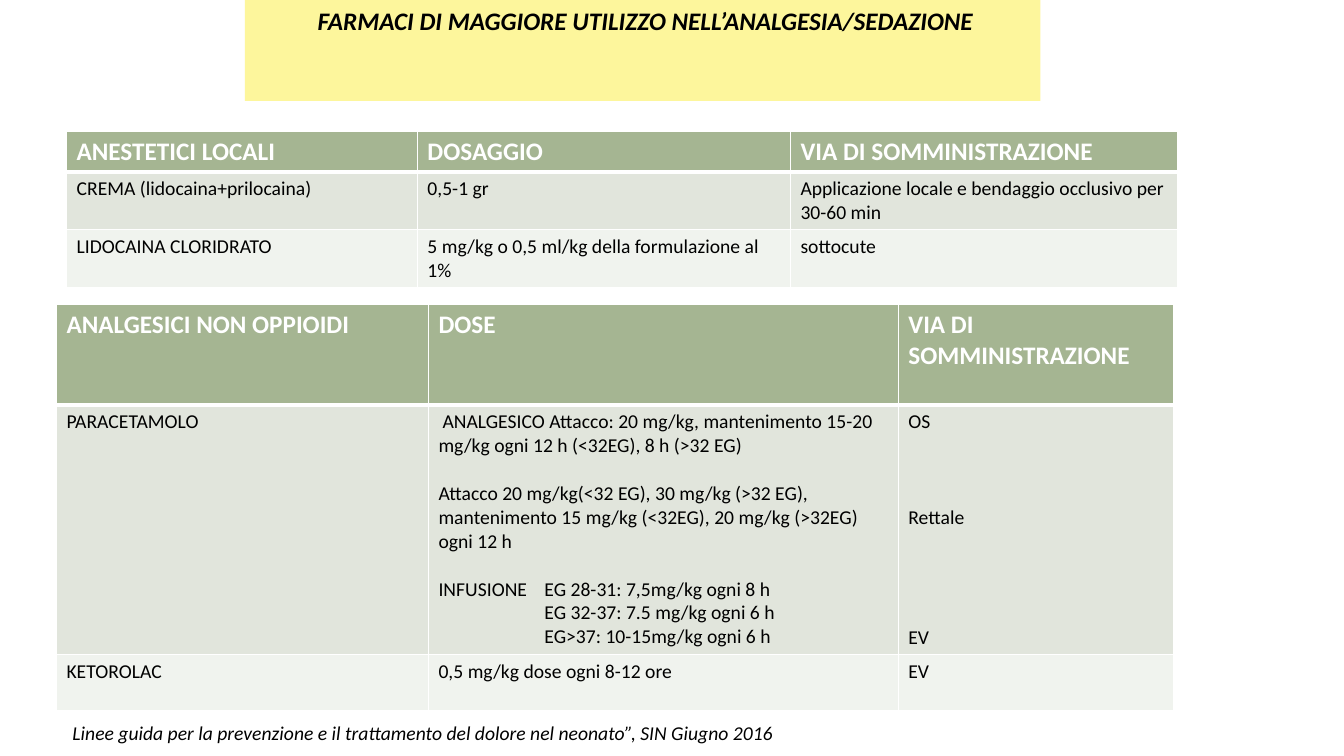
from dataclasses import dataclass

from lxml import etree
from pptx import Presentation
from pptx.dml.color import RGBColor
from pptx.enum.text import MSO_ANCHOR, MSO_AUTO_SIZE, PP_ALIGN
from pptx.oxml.ns import qn
from pptx.util import Inches, Pt

WHITE = RGBColor(0xFF, 0xFF, 0xFF)
BLACK = RGBColor(0x00, 0x00, 0x00)
YELLOW = RGBColor(0xFD, 0xF6, 0x9C)
GREEN = RGBColor(0xA5, 0xB5, 0x92)
BANDS = (RGBColor(0xE1, 0xE5, 0xDC), RGBColor(0xF0, 0xF3, 0xEE))
FONT = "Calibri"
LINE = 17.1  # height of one 14 pt line, in points
DOSE_INDENT = 1.05


@dataclass
class Line:
    """One paragraph of a cell: lines of space above, left margin, first-line indent."""
    text: str
    gap: int = 0
    margin: float = 0
    indent: float = 0


@dataclass
class DrugTable:
    left: float
    top: float
    widths: list[float]
    heights: list[float]
    rows: list[list[list[Line]]]


def cells(*texts: str) -> list[list[Line]]:
    return [[Line(text)] for text in texts]


LOCAL_ANAESTHETICS = DrugTable(
    0.66, 1.3, [3.48, 3.7, 3.84], [0.4, 0.57, 0.57],
    [
        cells("ANESTETICI LOCALI", "DOSAGGIO", "VIA DI SOMMINISTRAZIONE"),
        cells("CREMA (lidocaina+prilocaina)", "0,5-1 gr",
              "Applicazione locale e bendaggio occlusivo per 30-60 min"),
        cells("LIDOCAINA CLORIDRATO",
              "5 mg/kg o 0,5 ml/kg della formulazione al 1%", "sottocute"),
    ])

NON_OPIOIDS = DrugTable(
    0.56, 3.02, [3.69, 4.66, 2.73], [1.0, 2.44, 0.56],
    [
        cells("ANALGESICI NON OPPIOIDI", "DOSE", "VIA DI SOMMINISTRAZIONE"),
        [
            [Line("PARACETAMOLO")],
            [
                Line("ANALGESICO Attacco: 20 mg/kg, mantenimento 15-20 mg/kg "
                     "ogni 12 h (<32EG), 8 h (>32 EG)", indent=0.04),
                Line("Attacco 20 mg/kg(<32 EG), 30 mg/kg (>32 EG), mantenimento "
                     "15 mg/kg (<32EG), 20 mg/kg (>32EG) ogni 12 h", gap=1),
                Line("INFUSIONE\tEG 28-31: 7,5mg/kg ogni 8 h", 1,
                     DOSE_INDENT, -DOSE_INDENT),
                Line("EG 32-37: 7.5 mg/kg ogni 6 h", margin=DOSE_INDENT),
                Line("EG>37: 10-15mg/kg ogni 6 h", margin=DOSE_INDENT),
            ],
            [Line("OS"), Line("Rettale", gap=3), Line("EV", gap=4)],
        ],
        cells("KETOROLAC", "0,5 mg/kg dose ogni 8-12 ore", "EV"),
    ])


def format_runs(paragraph, size: int, color: RGBColor,
                bold: bool = False, italic: bool = False) -> None:
    for run in paragraph.runs:
        font = run.font
        font.name, font.size = FONT, Pt(size)
        font.bold, font.italic = bold, italic
        font.color.rgb = color


def set_borders(cell, header: bool) -> None:
    properties = cell._tc.get_or_add_tcPr()
    for index, side in enumerate("LRTB"):
        width = 3 if header and side == "B" else 1
        border = etree.Element(qn(f"a:ln{side}"), w=str(Pt(width)))
        fill = etree.SubElement(border, qn("a:solidFill"))
        etree.SubElement(fill, qn("a:srgbClr"), val=str(WHITE))
        properties.insert(index, border)


def fill_cell(cell, lines: list[Line], row: int) -> None:
    header = row == 0
    cell.fill.solid()
    cell.fill.fore_color.rgb = GREEN if header else BANDS[(row - 1) % 2]
    set_borders(cell, header)
    cell.text_frame.text = "\n".join(line.text for line in lines)
    for paragraph, line in zip(cell.text_frame.paragraphs, lines):
        paragraph.space_before = Pt(line.gap * LINE)
        properties = paragraph._p.get_or_add_pPr()
        properties.set("marL", str(Inches(line.margin)))
        properties.set("indent", str(Inches(line.indent)))
        if header:
            format_runs(paragraph, 18, WHITE, bold=True)
        else:
            format_runs(paragraph, 14, BLACK)


def add_drug_table(slide, drugs: DrugTable) -> None:
    table = slide.shapes.add_table(
        len(drugs.rows), len(drugs.widths), Inches(drugs.left), Inches(drugs.top),
        Inches(sum(drugs.widths)), Inches(sum(drugs.heights))).table
    for column, width in zip(table.columns, drugs.widths):
        column.width = Inches(width)
    for row, height in zip(table.rows, drugs.heights):
        row.height = Inches(height)
    for row_index, row_cells in enumerate(drugs.rows):
        for column_index, lines in enumerate(row_cells):
            fill_cell(table.cell(row_index, column_index), lines, row_index)


def add_title(slide) -> None:
    title = slide.shapes.title
    title.left, title.top = Inches(2.43), Inches(0)
    title.width, title.height = Inches(7.89), Inches(1)
    title.fill.solid()
    title.fill.fore_color.rgb = YELLOW
    frame = title.text_frame
    frame.text = "FARMACI DI MAGGIORE UTILIZZO NELL’ANALGESIA/SEDAZIONE"
    frame.word_wrap = True
    frame.auto_size = MSO_AUTO_SIZE.NONE
    frame.vertical_anchor = MSO_ANCHOR.TOP
    frame.margin_left = Inches(0.72)
    frame.paragraphs[0].alignment = PP_ALIGN.LEFT
    format_runs(frame.paragraphs[0], 18, BLACK, bold=True, italic=True)


def add_reference(slide) -> None:
    frame = slide.shapes.add_textbox(
        Inches(0.62), Inches(7.1), Inches(10.01), Inches(0.34)).text_frame
    frame.word_wrap = True
    frame.text = ("Linee guida per la prevenzione e il trattamento del dolore "
                  "nel neonato”, SIN Giugno 2016")
    format_runs(frame.paragraphs[0], 14, BLACK, italic=True)


def main() -> None:
    presentation = Presentation()
    presentation.slide_width = Inches(13.33)
    presentation.slide_height = Inches(7.5)
    slide = presentation.slides.add_slide(presentation.slide_layouts[5])

    # Heading
    add_title(slide)

    # Drug tables
    for drugs in (LOCAL_ANAESTHETICS, NON_OPIOIDS):
        add_drug_table(slide, drugs)

    # Source of the doses
    add_reference(slide)

    presentation.save("out.pptx")


if __name__ == "__main__":
    main()
